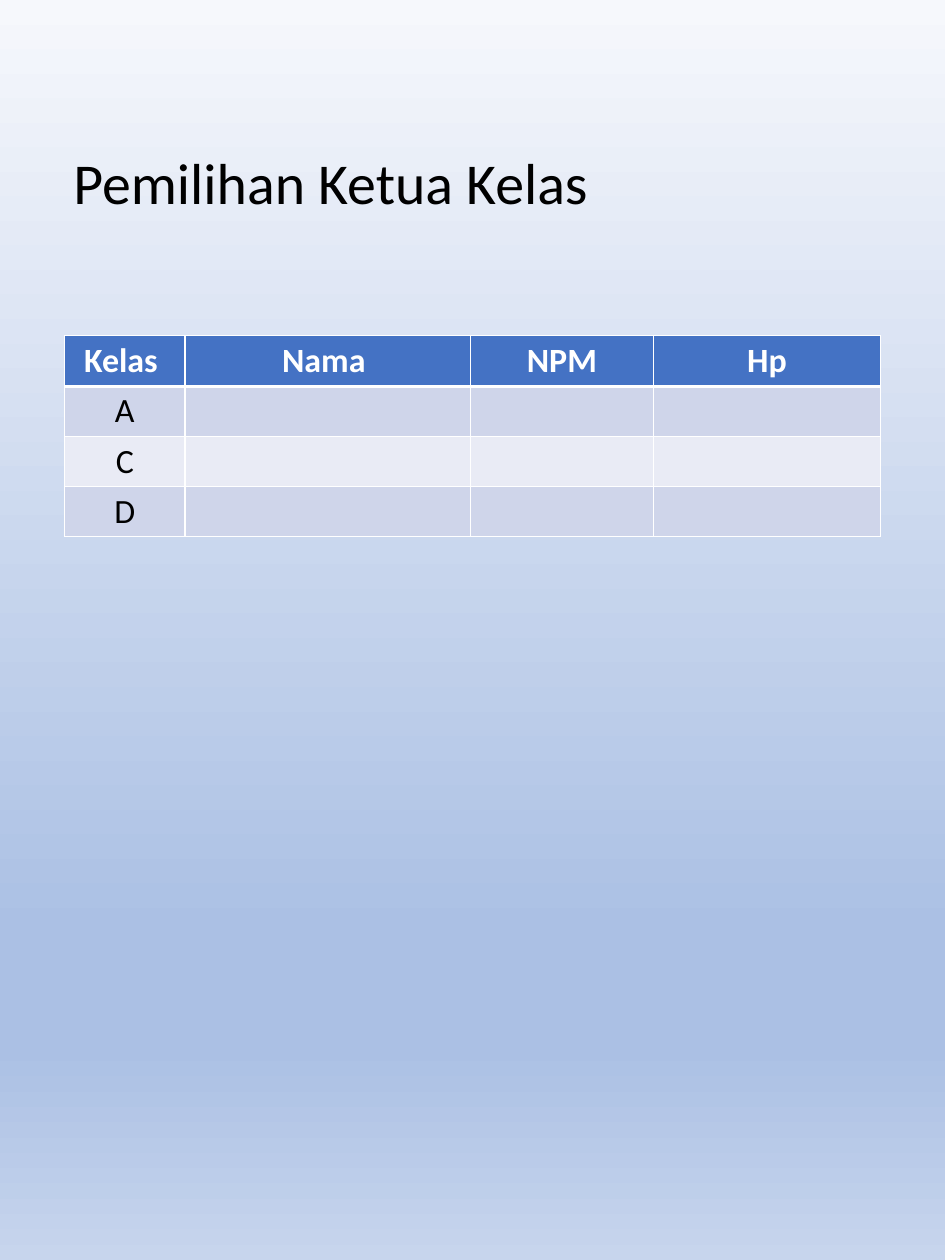
"""Build the class leader election slide with its table of candidates."""
from lxml import etree
from pptx import Presentation
from pptx.dml.color import RGBColor
from pptx.enum import text
from pptx.oxml import ns
from pptx.util import Inches, Pt

TITLE = "Pemilihan Ketua Kelas"
HEADINGS = ["Kelas ", "Nama ", "NPM", "Hp"]
CLASSES = ["A", "C", "D"]
COLUMN_WIDTHS = [1.38, 3.27, 2.1, 2.6]
ROW_HEIGHT = 0.57
LEFT, WIDTH = 0.74, 9.34
COLORS = {"black": "000000", "white": "FFFFFF", "header": "4472C4",
          "odd": "CFD5EA", "even": "E9EBF5"}
BACKGROUND = [(0, "F6F8FC"), (74, "ABC0E4"), (83, "ABC0E4"), (100, "C7D5ED")]


def color(name):
    return RGBColor.from_string(COLORS[name])


def format_font(font, color_name, **values):
    font.color.rgb = color(color_name)
    for name, value in {"name": "Calibri", **values}.items():
        setattr(font, name, value)


def add_child(parent, tag, **attributes):
    return etree.SubElement(parent, ns.qn(tag), **attributes)


def paint_background(page):
    fill = page.background.fill
    fill.gradient()
    fill.gradient_angle = 270
    stops = page.element.find(".//" + ns.qn("a:gsLst"))
    for stop in list(stops):
        stops.remove(stop)
    for percent, value in BACKGROUND:
        stop = add_child(stops, "a:gs", pos=str(percent * 1000))
        add_child(stop, "a:srgbClr", val=value)


def add_borders(cell, top, bottom):
    properties = cell._tc.get_or_add_tcPr()
    for side, width in {"L": 1, "R": 1, "T": top, "B": bottom}.items():
        line = add_child(properties, f"a:ln{side}", w=str(Pt(width)))
        fill = add_child(line, "a:solidFill")
        add_child(fill, "a:srgbClr", val=COLORS["white"])


def add_title(page):
    title = page.shapes.title
    title.left, title.top = Inches(LEFT), Inches(1.44)
    title.width, title.height = Inches(WIDTH), Inches(1.38)
    frame = title.text_frame
    frame.text = TITLE
    frame.auto_size = text.MSO_AUTO_SIZE.NONE
    frame.vertical_anchor = text.MSO_ANCHOR.MIDDLE
    para = frame.paragraphs[0]
    para.alignment = text.PP_ALIGN.LEFT
    para.line_spacing = 0.9
    format_font(para.runs[0].font, "black", size=Pt(47.7))


def add_candidates(page):
    rows = [HEADINGS] + [[name, "", "", ""] for name in CLASSES]
    table = page.shapes.add_table(
        len(rows), len(HEADINGS), Inches(LEFT), Inches(3.85),
        Inches(WIDTH), Inches(ROW_HEIGHT * len(rows))).table
    for column, width in zip(table.columns, COLUMN_WIDTHS):
        column.width = Inches(width)
    for index, values in enumerate(rows):
        is_header = index == 0
        band = "header" if is_header else ("even", "odd")[index % 2]
        for number, value in enumerate(values):
            cell = table.cell(index, number)
            add_borders(cell, 3 if index == 1 else 1, 3 if is_header else 1)
            cell.fill.solid()
            cell.fill.fore_color.rgb = color(band)
            if value:
                cell.text = value
                para = cell.text_frame.paragraphs[0]
                para.alignment = text.PP_ALIGN.CENTER
                format_font(para.runs[0].font, "white" if is_header else "black",
                            size=Pt(28), bold=is_header)


def main():
    deck = Presentation()
    deck.slide_width, deck.slide_height = Inches(10.83), Inches(14.44)
    page = deck.slides.add_slide(deck.slide_layouts[5])
    paint_background(page)
    add_title(page)
    add_candidates(page)
    deck.save("out.pptx")


if __name__ == "__main__":
    main()
